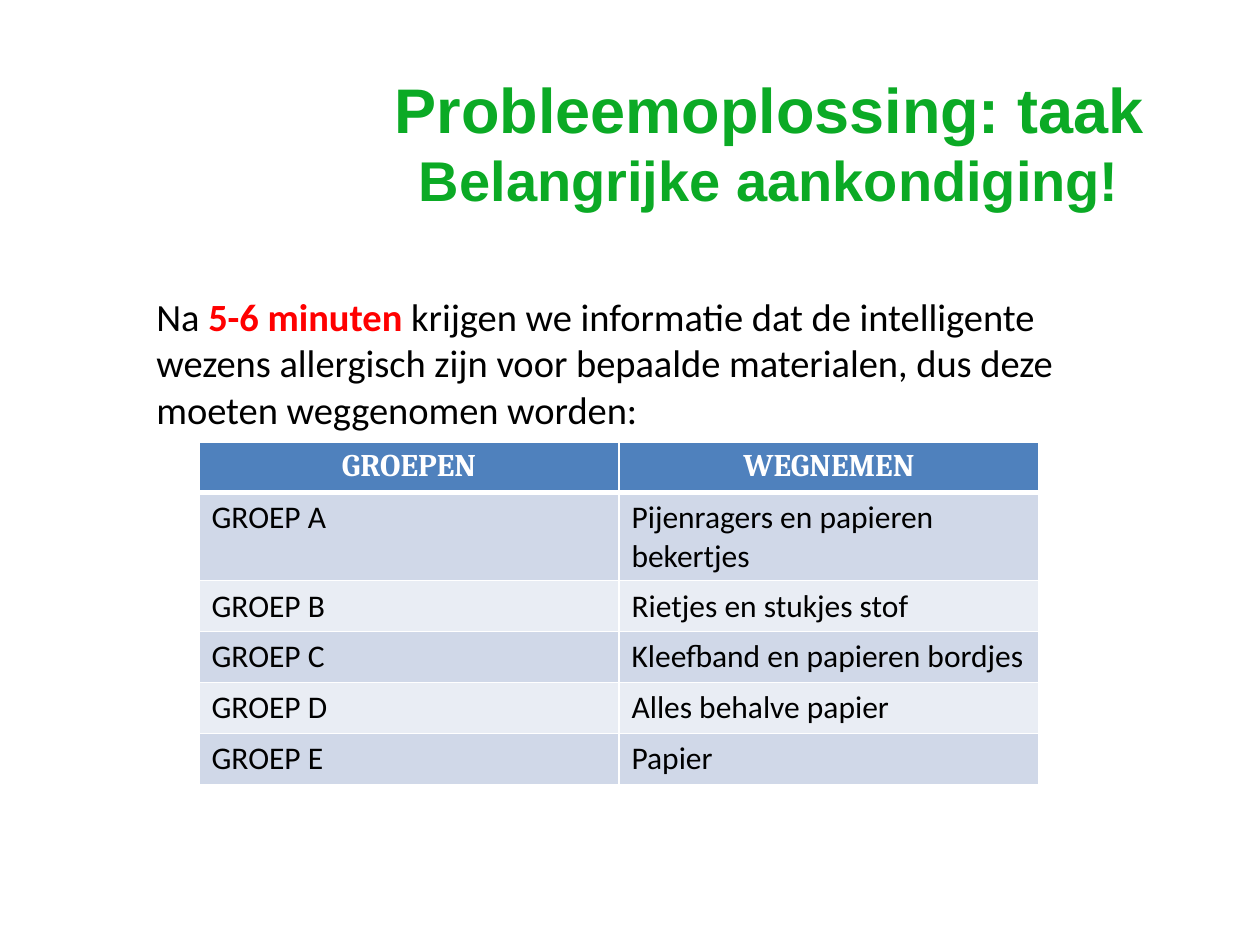
from dataclasses import dataclass

from lxml import etree
from pptx import Presentation
from pptx import util as u
from pptx.dml import color
from pptx.enum import text
from pptx.oxml import ns

PX = u.Inches(1) / 126


@dataclass(frozen=True)
class Theme:
    green: str = "0BAA25"
    red: str = "FF0000"
    black: str = "000000"
    white: str = "FFFFFF"
    header: str = "4F81BD"
    bands: tuple = ("D0D8E8", "E9EDF4")
    title_size: int = 36
    subtitle_size: int = 32
    body_size: int = 22
    table_size: int = 18
    title_font: str = "Arial"
    body_font: str = "Calibri"
    header_font: str = "Cambria"
    border: int = 1
    header_border: int = 3


def px(*lengths):
    return [u.Emu(round(length * PX)) for length in lengths]


class SlideBuilder:
    def __init__(self, presentation, theme):
        self.theme = theme
        self.slide = presentation.slides.add_slide(presentation.slide_layouts[5])

    def run(self, paragraph, words, rgb, **formats):
        run = paragraph.add_run()
        run.text = words
        for name, value in formats.items():
            setattr(run.font, name, value)
        run.font.color.rgb = color.RGBColor.from_string(rgb)

    def title(self, box, lines):
        shape = self.slide.shapes.title
        for name, value in zip(("left", "top", "width", "height"), px(*box)):
            setattr(shape, name, value)
        frame = shape.text_frame
        frame.auto_size = text.MSO_AUTO_SIZE.NONE
        frame.vertical_anchor = text.MSO_ANCHOR.MIDDLE
        for index, (words, size) in enumerate(lines):
            paragraph = frame.add_paragraph() if index else frame.paragraphs[0]
            paragraph.alignment = text.PP_ALIGN.CENTER
            self.run(paragraph, words, self.theme.green, bold=True,
                     size=u.Pt(size), name=self.theme.title_font)

    def body(self, box, pieces):
        frame = self.slide.shapes.add_textbox(*px(*box)).text_frame
        frame.word_wrap = True
        for words, rgb, bold in pieces:
            self.run(frame.paragraphs[0], words, rgb, bold=bold,
                     size=u.Pt(self.theme.body_size), name=self.theme.body_font)

    def borders(self, cell, is_header):
        properties = cell._tc.get_or_add_tcPr()
        for side in "LRTB":
            thick = is_header and side == "B"
            width = self.theme.header_border if thick else self.theme.border
            line = etree.SubElement(properties, ns.qn(f"a:ln{side}"), w=str(u.Pt(width)))
            fill = etree.SubElement(line, ns.qn("a:solidFill"))
            etree.SubElement(fill, ns.qn("a:srgbClr"), val=self.theme.white)

    def cell(self, cell, words, row):
        theme = self.theme
        is_header = row == 0
        self.borders(cell, is_header)
        cell.fill.solid()
        fill = theme.header if is_header else theme.bands[(row - 1) % 2]
        cell.fill.fore_color.rgb = color.RGBColor.from_string(fill)
        paragraph = cell.text_frame.paragraphs[0]
        paragraph.alignment = text.PP_ALIGN.CENTER if is_header else text.PP_ALIGN.LEFT
        self.run(paragraph, words, theme.white if is_header else theme.black,
                 bold=is_header, size=u.Pt(theme.table_size),
                 name=theme.header_font if is_header else theme.body_font)

    def table(self, box, heights, rows):
        table = self.slide.shapes.add_table(len(rows), len(rows[0]), *px(*box)).table
        for row, (height, values) in enumerate(zip(px(*heights), rows)):
            table.rows[row].height = height
            for column, words in enumerate(values):
                self.cell(table.cell(row, column), words, row)


def main():
    presentation = Presentation()
    presentation.slide_width, presentation.slide_height = px(1260, 945)
    theme = Theme()
    builder = SlideBuilder(presentation, theme)
    builder.title((372, 78, 795, 127), [
        ("Probleemoplossing: taak", theme.title_size),
        ("Belangrijke aankondiging!", theme.subtitle_size),
    ])
    builder.body((144, 287, 951, 152), [
        ("Na ", theme.black, False),
        ("5-6 minuten ", theme.red, True),
        ("krijgen we informatie dat de intelligente wezens allergisch zijn voor "
         "bepaalde materialen, dus deze moeten weggenomen worden:", theme.black, False),
    ])
    builder.table((199, 442, 840, 342), [50, 88] + [51] * 4, [
        ("GROEPEN", "WEGNEMEN"),
        ("GROEP A", "Pijenragers en papieren bekertjes"),
        ("GROEP B", "Rietjes en stukjes stof"),
        ("GROEP C", "Kleefband en papieren bordjes"),
        ("GROEP D", "Alles behalve papier"),
        ("GROEP E", "Papier"),
    ])
    presentation.save("out.pptx")


if __name__ == "__main__":
    main()
